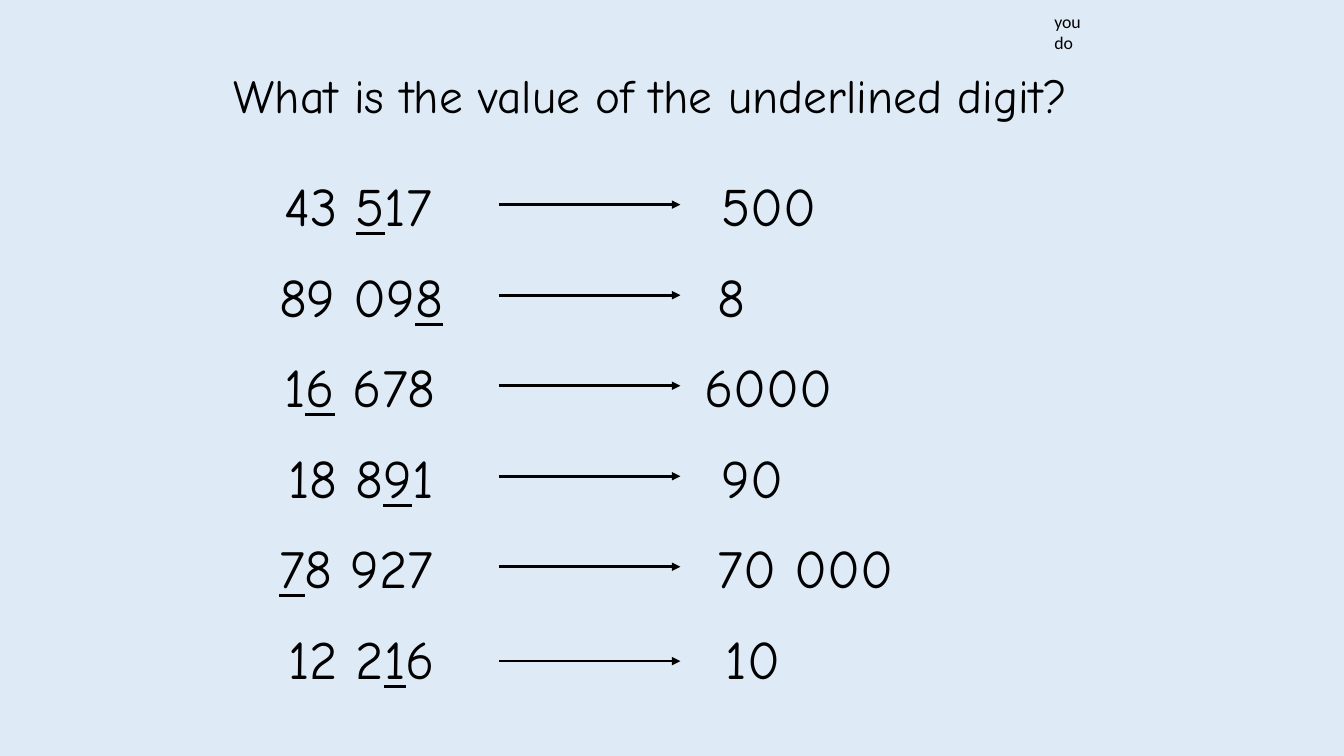
from pptx import Presentation
from pptx.dml.color import RGBColor
from pptx.enum import shapes, text
from pptx.oxml import ns
from pptx.util import Pt
from lxml import etree

# Content
TITLE = "What is the value of the underlined digit?"
LABEL = "you do"
# Number in parts, its left; answer, its left and width; arrow shift
ROWS = [
    (("43 ", "5", "17"), 200, "500", 512.6, 77, 0),
    (("89 09", "8", ""), 196.5, "8", 509.8, 29.5, 0),
    (("1", "6", " 678"), 200, "6000", 500.4, 101, 0),
    (("18 8", "9", "1"), 203, "90", 512.6, 53.3, 0),
    (("", "7", "8 927"), 196.5, "70 000", 509.8, 137, 0),
    (("12 2", "1", "6"), 203, "10", 515.5, 46.8, 2.7),
]

# Layout
MID = 265  # shared centre of the numbers
TOP, STEP, HIGH = 120.2, 64.66, 52.6
START, END, LEVEL = 356.4, 486, 146.2
HAND, PLAIN, BLACK, PALE = "Comic Neue", "Calibri", "000000", "DEEBF7"


def paint(color, code):
    color.rgb = RGBColor.from_string(code)


def write(slide, parts, box, size=38.7, font=HAND):
    """Add a text box; the second of several parts is underlined."""
    frame = slide.shapes.add_textbox(*map(Pt, box)).text_frame
    frame.word_wrap = False
    frame.auto_size = text.MSO_AUTO_SIZE.SHAPE_TO_FIT_TEXT
    frame.vertical_anchor = text.MSO_ANCHOR.MIDDLE
    frame.margin_left = frame.margin_right = Pt(2.9)
    frame.margin_top = frame.margin_bottom = Pt(2.9)
    for i, part in enumerate(parts):
        if part:
            run = frame.paragraphs[0].add_run()
            run.text = part
            run.font.size, run.font.name = Pt(size), font
            run.font.underline = i == 1
            paint(run.font.color, BLACK)


def arrow(slide, y):
    link = slide.shapes.add_connector(
        shapes.MSO_CONNECTOR.STRAIGHT, Pt(START), Pt(y), Pt(END), Pt(y))
    link.line.width = Pt(2)
    paint(link.line.color, BLACK)
    props = link._element.spPr
    etree.SubElement(props.find(ns.qn("a:ln")), ns.qn("a:tailEnd"), type="triangle")
    etree.SubElement(props, ns.qn("a:effectLst"))


def main():
    deck = Presentation()
    deck.slide_width, deck.slide_height = Pt(960), Pt(540)
    slide = deck.slides.add_slide(deck.slide_layouts[6])
    fill = slide.background.fill
    fill.solid()
    paint(fill.fore_color, PALE)

    # Heading and corner label
    write(slide, [TITLE], (164.2, 43.9, 673.2, 46.8), 33.8)
    write(slide, [LABEL], (750.2, 12.2, 41, 20.9), 12.7, PLAIN)

    # Number, arrow and answer on each row
    for i, (parts, left, answer, x, wide, shift) in enumerate(ROWS):
        drop = i * STEP
        write(slide, parts, (left, TOP + drop, 2 * (MID - left), HIGH))
        arrow(slide, LEVEL + drop + shift)
        write(slide, [answer], (x, TOP + drop, wide, HIGH))

    deck.save("out.pptx")


if __name__ == "__main__":
    main()
